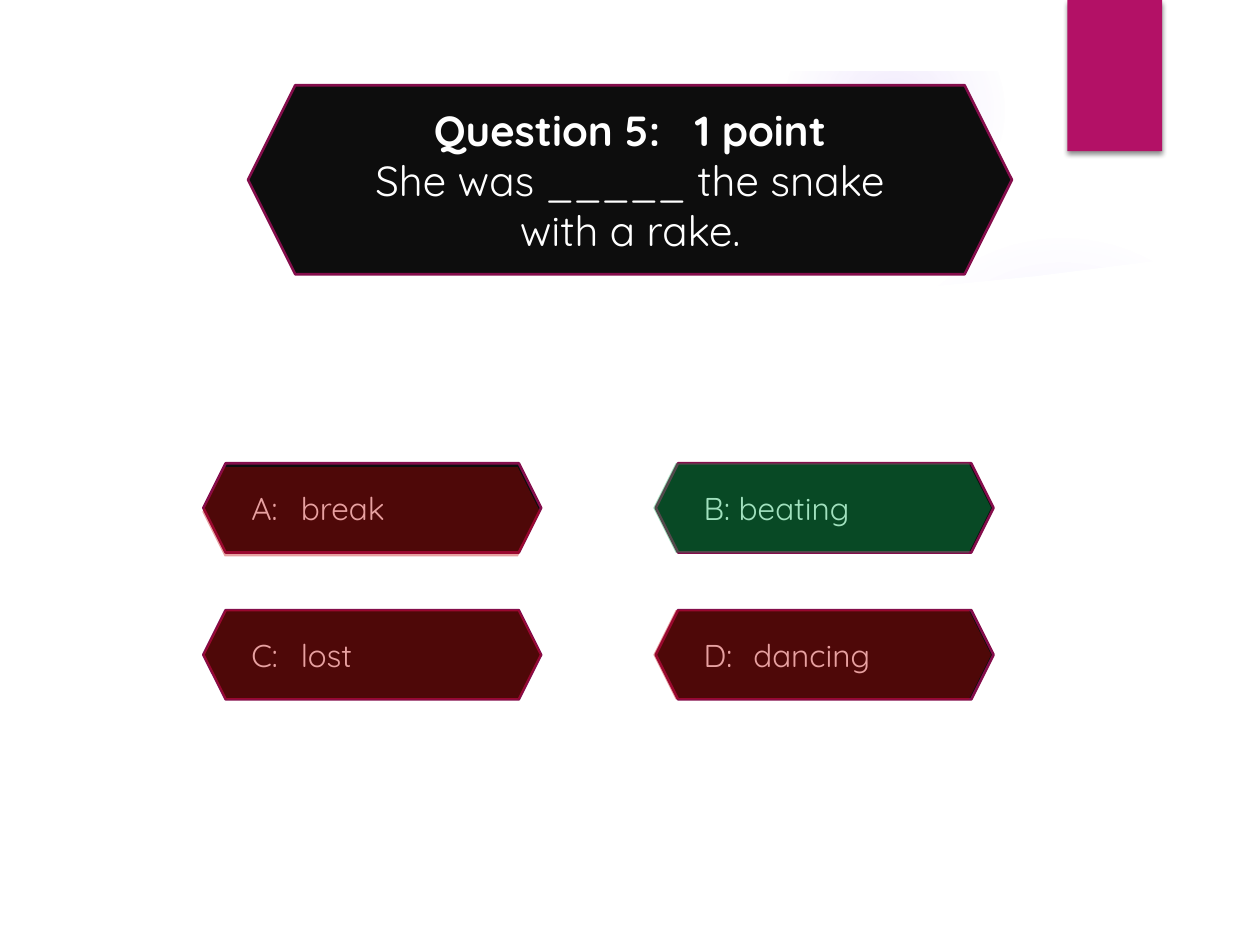
from lxml import etree
from pptx import Presentation
from pptx.dml.color import RGBColor
from pptx.enum.shapes import MSO_SHAPE as Kind
from pptx.enum.text import MSO_ANCHOR as Anchor, PP_ALIGN as Align
from pptx.oxml import parse_xml
from pptx.oxml.ns import nsdecls, qn
from pptx.util import Cm, Pt

FONT = "Quicksand"
BLACK, WHITE, PLUM = "0D0D0D", "FFFFFF", "840D4B"
RED, GREEN = "C00000", "00B050"


def tint(hue):
    """Turn a hex string into a colour."""
    return RGBColor.from_string(hue)


def paint(shape, fill, line=None):
    """Give a shape a solid fill and an outline or none."""
    shape.shadow.inherit = False
    shape.fill.solid()
    shape.fill.fore_color.rgb = tint(fill)
    if line:
        shape.line.color.rgb = tint(line)
        shape.line.width = Pt(1.5)
    else:
        shape.line.fill.background()


def draw(slide, kind, box, fill, line=None):
    """Add a flat preset shape in a box given in centimetres."""
    shape = slide.shapes.add_shape(kind, *map(Cm, box))
    paint(shape, fill, line)
    return shape


def plate(slide, box):
    """Add a black hexagon and return its text frame."""
    frame = draw(slide, Kind.HEXAGON, box, BLACK, PLUM).text_frame
    frame.word_wrap = True
    frame.vertical_anchor = Anchor.MIDDLE
    return frame


def style(font, size, bold=False):
    """Set white text in the slide's font."""
    font.name, font.size, font.bold = FONT, Pt(size), bold
    font.color.rgb = tint(WHITE)


def fade(shape, part):
    """Make a solid fill see-through, with the part that stays in percent."""
    node = shape.fill._xPr.find(qn("a:solidFill"))[0]
    etree.SubElement(node, qn("a:alpha")).set("val", str(part * 1000))


def glow(slide, box, stops):
    """Add a round violet glow that fades outwards."""
    shape = draw(slide, Kind.OVAL, box, WHITE)
    marks = "".join(
        f'<a:gs pos="{pos * 1000}"><a:srgbClr val="9B6BF2">'
        f'<a:alpha val="{part * 1000}"/></a:srgbClr></a:gs>'
        for pos, part in stops)
    grad = parse_xml(
        f'<a:gradFill {nsdecls("a")}><a:gsLst>{marks}</a:gsLst>'
        '<a:path path="circle"><a:fillToRect l="50000" t="50000" '
        'r="50000" b="50000"/></a:path></a:gradFill>')
    solid = shape.fill._xPr.find(qn("a:solidFill"))
    solid.getparent().replace(solid, grad)


def sheet(slide, box):
    """Add the white sheet with a bowed top edge."""
    left, top, wide, high = box
    bow = [(0.05, 0.14), (0.13, 0.35), (0.25, 0.58), (0.39, 0.76),
           (0.51, 0.79), (0.64, 0.76), (0.77, 0.61), (0.86, 0.41),
           (0.95, 0.15), (1, 0), (1, high), (0, high)]
    path = slide.shapes.build_freeform(Cm(left), Cm(top))
    path.add_line_segments([(Cm(left + x * wide), Cm(top + y)) for x, y in bow])
    paint(path.convert_to_shape(), WHITE)


def ground(slide, box):
    """Lay out the glows, the sheet and the white frame."""
    left, top, wide, high = box
    for x, y, size, core, mid, edge in [
            (0, 8.05, 6.55, 8, 8, 72), (17.5, 4.65, 7.82, 7, 6, 69),
            (15.8, 0, 4.45, 14, 7, 73), (17.5, 16.31, 2.74, 14, 7, 66),
            (0, 7.42, 11.63, 11, 10, 75)]:
        glow(slide, (left + x, top + y, size, size),
             [(0, core), (36, mid), (edge, 0)])
    sheet(slide, (left + 1.35, top + 5.16, wide - 2.7, 12.6))
    frame = draw(slide, Kind.FRAME, box, WHITE)
    frame.adjustments[0] = 0.075


def ribbon(slide, box):
    """Add the pink ribbon with its soft shadow."""
    shape = draw(slide, Kind.RECTANGLE, box, "B31166")
    cast = parse_xml(
        f'<a:outerShdw {nsdecls("a")} blurRad="{Pt(3)}" dist="{Pt(2)}" '
        'dir="5400000" rotWithShape="0"><a:srgbClr val="000000">'
        '<a:alpha val="45000"/></a:srgbClr></a:outerShdw>')
    shape._element.spPr.find(qn("a:effectLst")).append(cast)


def ask(slide, box, head, text):
    """Add the hexagon that holds the question."""
    frame = plate(slide, box)
    first, second = frame.paragraphs[0], frame.add_paragraph()
    for part in (head[0], " ", head[1]):
        run = first.add_run()
        run.text = part
        style(run.font, 24, True)
    first.runs[1].font._element.set("spc", "1300")
    second.text = text
    style(second.runs[0].font, 24)
    for para in frame.paragraphs:
        para.alignment = Align.CENTER


def choice(slide, box, text, hue, shift):
    """Add one answer with its see-through marking on top."""
    para = plate(slide, box).paragraphs[0]
    para.text = text
    para.alignment = Align.LEFT
    tabs = etree.SubElement(para._p.get_or_add_pPr(), qn("a:tabLst"))
    etree.SubElement(tabs, qn("a:tab"), pos=str(Cm(1)), algn="l")
    style(para.runs[0].font, 18)
    left, top, wide, high = box
    veil = draw(slide, Kind.HEXAGON,
                (left + shift[0], top + shift[1], wide, high), hue)
    fade(veil, 37)


def board(slide, box, items):
    """Place the answers in a grid of two columns."""
    left, top, wide, high = box
    tile, bar = 6.81, 1.8
    for num, (text, hue, shift) in enumerate(items):
        row, col = divmod(num, 2)
        spot = (left + col * (wide - tile), top + row * (high - bar), tile, bar)
        choice(slide, spot, text, hue, shift)


def main():
    """Build and save the quiz slide."""
    deck = Presentation()
    deck.slide_width, deck.slide_height = Cm(25.4), Cm(19.05)
    slide = deck.slides.add_slide(deck.slide_layouts[6])
    ground(slide, (0, 0, 25.4, 19.05))
    ribbon(slide, (21.52, 0, 1.91, 3.05))
    board(slide, (4.1, 9.34, 15.93, 4.76), [
        ("A:\tbreak", RED, (-0.02, 0.08)),
        ("B: beating", GREEN, (-0.05, 0)),
        ("C:\tlost", RED, (0, 0)),
        ("D:\tdancing", RED, (-0.05, 0))])
    ask(slide, (5, 1.72, 15.4, 3.81), ("Question 5:", "1 point"),
        "She was _____ the snake with a rake.")
    deck.save("out.pptx")


if __name__ == "__main__":
    main()
